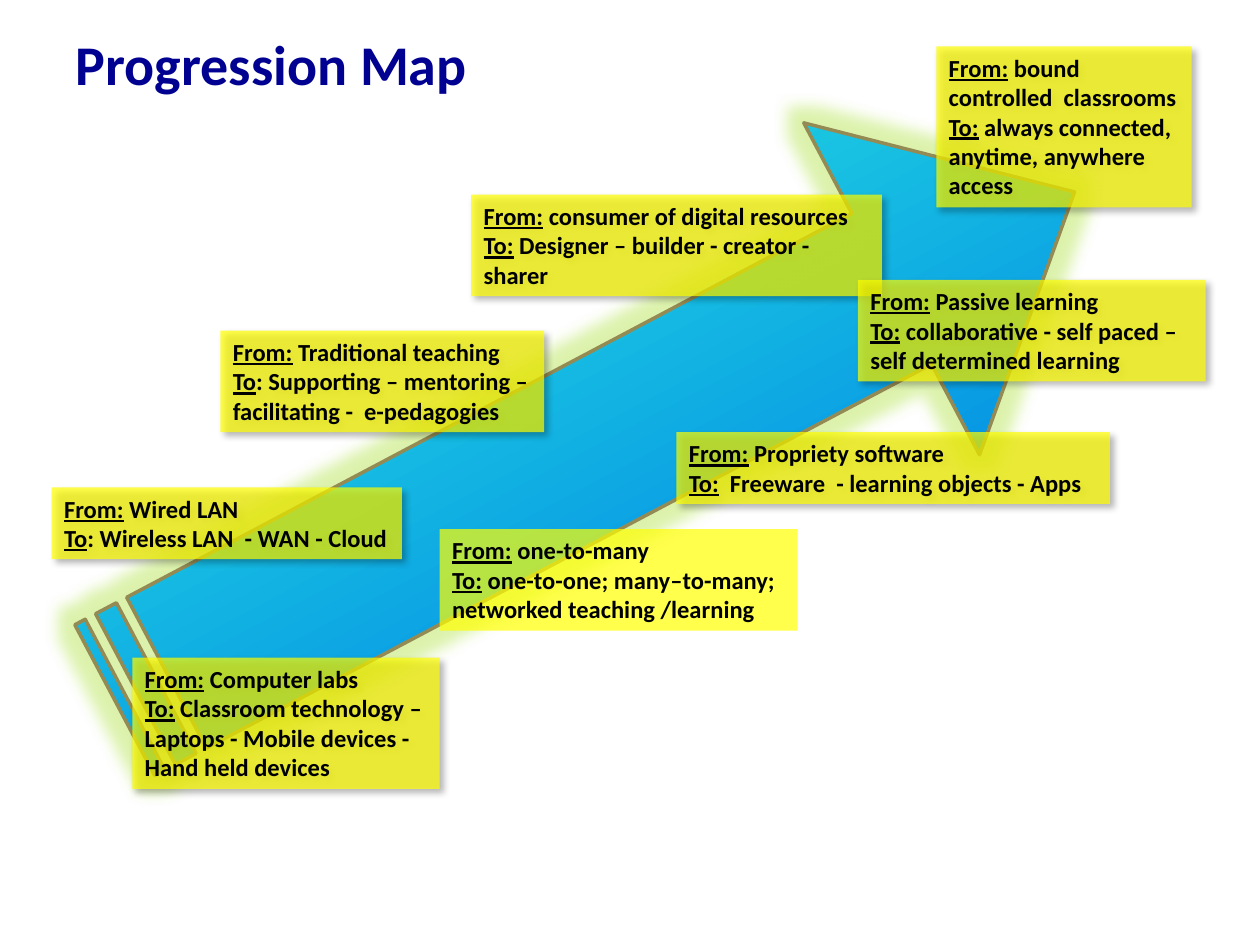
from dataclasses import dataclass

from lxml import etree
from pptx import Presentation
from pptx import util as u
from pptx.dml.color import RGBColor
from pptx.enum import shapes, text
from pptx.oxml.ns import qn


@dataclass(frozen=True)
class Theme:
    font: str = "Calibri"
    title_size: int = 32
    note_size: int = 14
    title: str = "000091"
    ink: str = "000000"
    note: str = "FFFF00"
    outline: str = "948A54"
    glow: str = "A8E030"
    sweep: tuple = ((0, "03D4A8"), (25, "21D6E0"), (75, "0087E6"), (100, "005CBF"))


# left, top, width, height in points; (underlined, rest) for each line; shadow
NOTES = [
    ((535, 26.6, 146, 92),
     [("From:", " bound controlled  classrooms"),
      ("To:", " always connected, anytime, anywhere access")], True),
    ((75.6, 375.8, 175.7, 75),
     [("From:", " Computer labs"),
      ("To:", " Classroom technology – Laptops - Mobile devices - Hand held devices")], True),
    ((386.6, 247, 247.7, 41),
     [("From:", " Propriety software"),
      ("To:", "  Freeware  - learning objects - Apps")], True),
    ((126, 189, 185, 58),
     [("From:", " Traditional teaching"),
      ("To", ": Supporting – mentoring – facilitating -  e-pedagogies")], True),
    ((269.3, 111.2, 234.7, 58),
     [("From:", " consumer of digital resources"),
      ("To:", " Designer – builder - creator - sharer")], True),
    ((490.3, 160, 198.7, 58),
     [("From:", " Passive learning"),
      ("To:", " collaborative - self paced – self determined learning")], True),
    ((29.5, 278.6, 200.2, 41),
     [("From:", " Wired LAN"),
      ("To", ": Wireless LAN  - WAN - Cloud")], True),
    ((251.3, 302.4, 204.5, 58),
     [("From:", " one-to-many"),
      ("To:", " one-to-one; many–to-many; networked teaching /learning")], False),
]


def apply(target, values):
    for name, value in values.items():
        setattr(target, name, value)


def add(parent, tag, **attributes):
    values = {name: str(value) for name, value in attributes.items()}
    return etree.SubElement(parent, qn(tag), values)


def add_color(parent, color, alpha):
    add(add(parent, "a:srgbClr", val=color), "a:alpha", val=alpha * 1000)


class MapSlide:
    def __init__(self, slide, theme):
        self.slide, self.theme = slide, theme

    def font(self, target, size, color):
        apply(target, {"name": self.theme.font, "size": u.Pt(size), "bold": True})
        target.color.rgb = RGBColor.from_string(color)

    def title(self, wording, box):
        heading = self.slide.shapes.title
        apply(heading, dict(zip(("left", "top", "width", "height"), map(u.Pt, box))))
        apply(heading.text_frame, {"text": wording, "word_wrap": True,
                                   "vertical_anchor": text.MSO_ANCHOR.TOP})
        line = heading.text_frame.paragraphs[0]
        line.alignment = text.PP_ALIGN.LEFT
        self.font(line.runs[0].font, self.theme.title_size, self.theme.title)

    def progress_arrow(self, box, rotation, adjustments):
        arrow = self.slide.shapes.add_shape(
            shapes.MSO_SHAPE.STRIPED_RIGHT_ARROW, *map(u.Pt, box))
        arrow.rotation = rotation
        for i, value in enumerate(adjustments):
            arrow.adjustments[i] = value
        arrow.line.width = u.Pt(2)
        arrow.line.color.rgb = RGBColor.from_string(self.theme.outline)
        arrow.fill.gradient()
        arrow.fill.gradient_angle = 270
        stops = arrow.fill.gradient_stops
        stop_list = arrow.element.spPr.find(".//" + qn("a:gsLst"))
        for stop in list(stop_list):
            stop_list.remove(stop)
        for position, color in self.theme.sweep:
            add(add(stop_list, "a:gs", pos=position * 1000), "a:srgbClr", val=color)
        effects = add(arrow.element.spPr, "a:effectLst")
        add_color(add(effects, "a:glow", rad=u.Pt(18)), self.theme.glow, 40)

    def note(self, box, lines, shadow):
        card = self.slide.shapes.add_shape(shapes.MSO_SHAPE.RECTANGLE, *map(u.Pt, box))
        card.shadow.inherit = False
        card.line.fill.background()
        card.fill.solid()
        card.fill.fore_color.rgb = RGBColor.from_string(self.theme.note)
        properties = card.element.spPr
        add(properties.find(".//" + qn("a:srgbClr")), "a:alpha", val=70000)
        if shadow:
            drop = add(properties.find(qn("a:effectLst")), "a:outerShdw",
                       blurRad=u.Pt(4), dist=u.Pt(3), dir=45 * 60000,
                       algn="tl", rotWithShape=0)
            add_color(drop, self.theme.ink, 40)
        frame = card.text_frame
        apply(frame, {"word_wrap": True, "vertical_anchor": text.MSO_ANCHOR.TOP,
                      "auto_size": text.MSO_AUTO_SIZE.SHAPE_TO_FIT_TEXT})
        for i, (label, change) in enumerate(lines):
            line = frame.add_paragraph() if i else frame.paragraphs[0]
            line.alignment = text.PP_ALIGN.LEFT
            for wording, underline in ((label, True), (change, False)):
                run = line.add_run()
                run.text = wording
                self.font(run.font, self.theme.note_size, self.theme.ink)
                run.font.underline = underline


def main():
    deck = Presentation()
    apply(deck, {"slide_width": u.Pt(720), "slide_height": u.Pt(540)})
    progression = MapSlide(deck.slides.add_slide(deck.slide_layouts[5]), Theme())
    progression.title("Progression Map", (36, 13, 648, 68.4))
    progression.progress_arrow((29.5, 147.6, 620.6, 214.6), 332.1, (0.454, 0.551))
    for box, lines, shadow in NOTES:
        progression.note(box, lines, shadow)
    deck.save("out.pptx")


if __name__ == "__main__":
    main()
